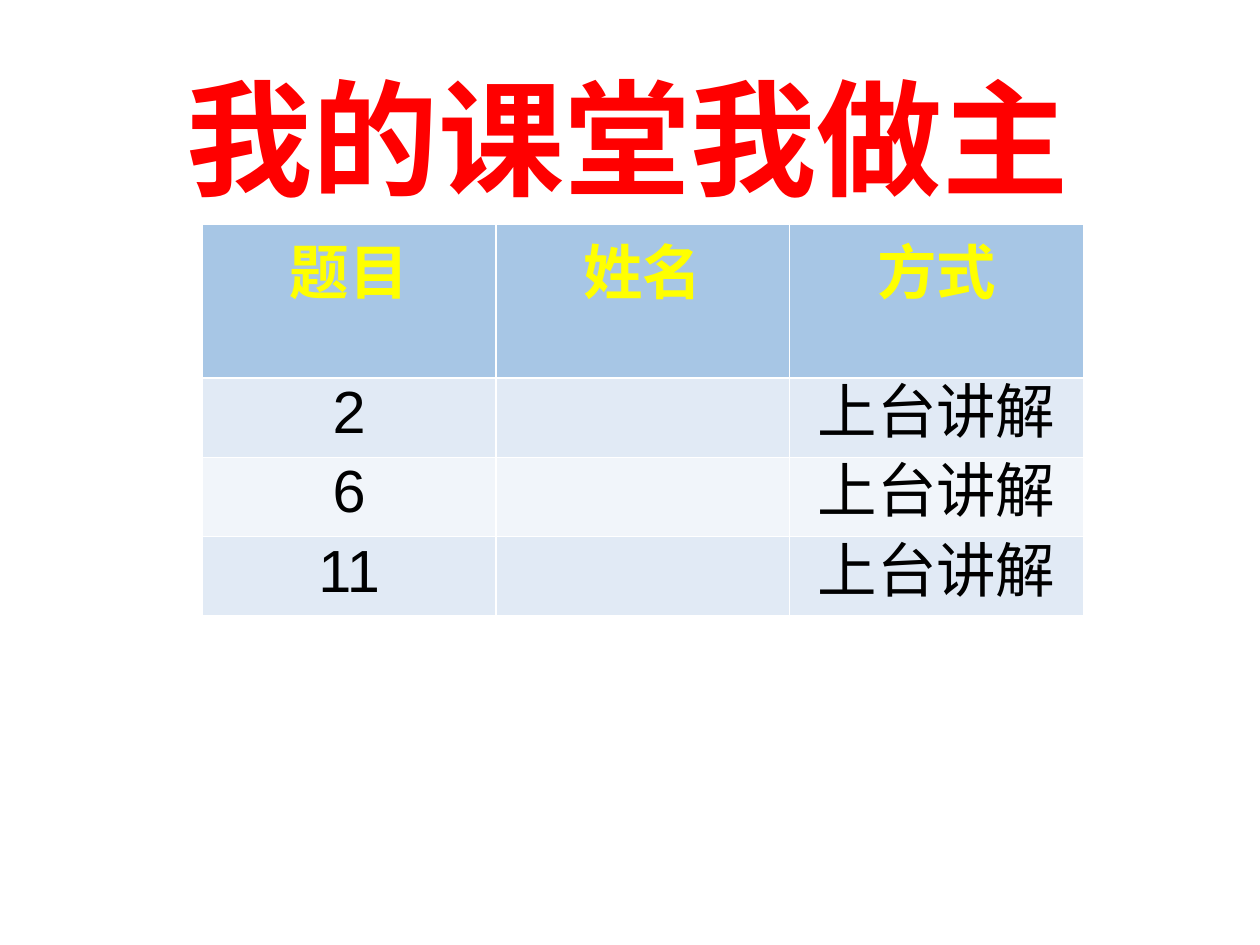
from lxml import etree
from pptx import Presentation, util as u
from pptx.dml.color import RGBColor
from pptx.enum import text as t
from pptx.oxml.ns import qn

HUES = {"red": "FF0000", "gold": "FFFF00", "ink": "000000", "line": "FFFFFF",
        "head": "A7C6E5", "odd": "E1EAF5", "even": "F1F5FA"}
SANS = "Noto Sans CJK SC"


def write(frame, words, hue, **form):
    par = frame.paragraphs[0]
    par.alignment = t.PP_ALIGN.CENTER
    run = par.add_run()
    run.text = words
    for key, val in form.items():
        setattr(run.font, key, val)
    run.font.color.rgb = RGBColor.from_string(HUES[hue])
    etree.SubElement(run.font._element, qn("a:ea"), typeface=form["name"])


def edge(cell, side, width):
    props = cell._tc.get_or_add_tcPr()
    line = etree.SubElement(props, qn("a:" + side), w=str(u.Pt(width)))
    fill = etree.SubElement(line, qn("a:solidFill"))
    etree.SubElement(fill, qn("a:srgbClr"), val=HUES["line"])


deck = Presentation()
deck.slide_width, deck.slide_height = u.Cm(25.4), u.Cm(19.05)
slide = deck.slides.add_slide(deck.slide_layouts[6])

title = slide.shapes.add_textbox(u.Cm(3.48), u.Cm(1.09), u.Cm(18.36), u.Cm(3.33))
title.text_frame.word_wrap = False
write(title.text_frame, "我的课堂我做主", "red", name="Arial", size=u.Pt(72), bold=True)

rows = [["题目", "姓名", "方式"]] + [[num, "", "上台讲解"] for num in ("2", "6", "11")]
tall = [3.1] + [1.6] * 3
grid = slide.shapes.add_table(4, 3, u.Cm(4.08), u.Cm(4.52), u.Cm(17.76), u.Cm(sum(tall))).table
for col in grid.columns:
    col.width = u.Cm(5.92)

pads = {"margin_left": u.Cm(0.03), "margin_right": u.Cm(0.03),
        "margin_top": u.Cm(0.03), "margin_bottom": 0}
head = {"hue": "gold", "name": SANS, "size": u.Pt(34), "bold": True}
body = {"hue": "ink", "name": "Arial", "size": u.Pt(34), "bold": False}

for r, row in enumerate(rows):
    grid.rows[r].height = u.Cm(tall[r])
    shade = "head" if r == 0 else "odd" if r % 2 else "even"
    for c, words in enumerate(row):
        cell = grid.cell(r, c)
        for key, val in pads.items():
            setattr(cell, key, val)
        if words:
            write(cell.text_frame, words, **(body if r else head))
        for side in ("lnL", "lnR", "lnT", "lnB"):
            thick = (r, side) in ((0, "lnB"), (1, "lnT"))
            edge(cell, side, 1.5 if thick else 1)
        cell.fill.solid()
        cell.fill.fore_color.rgb = RGBColor.from_string(HUES[shade])

deck.save("out.pptx")
